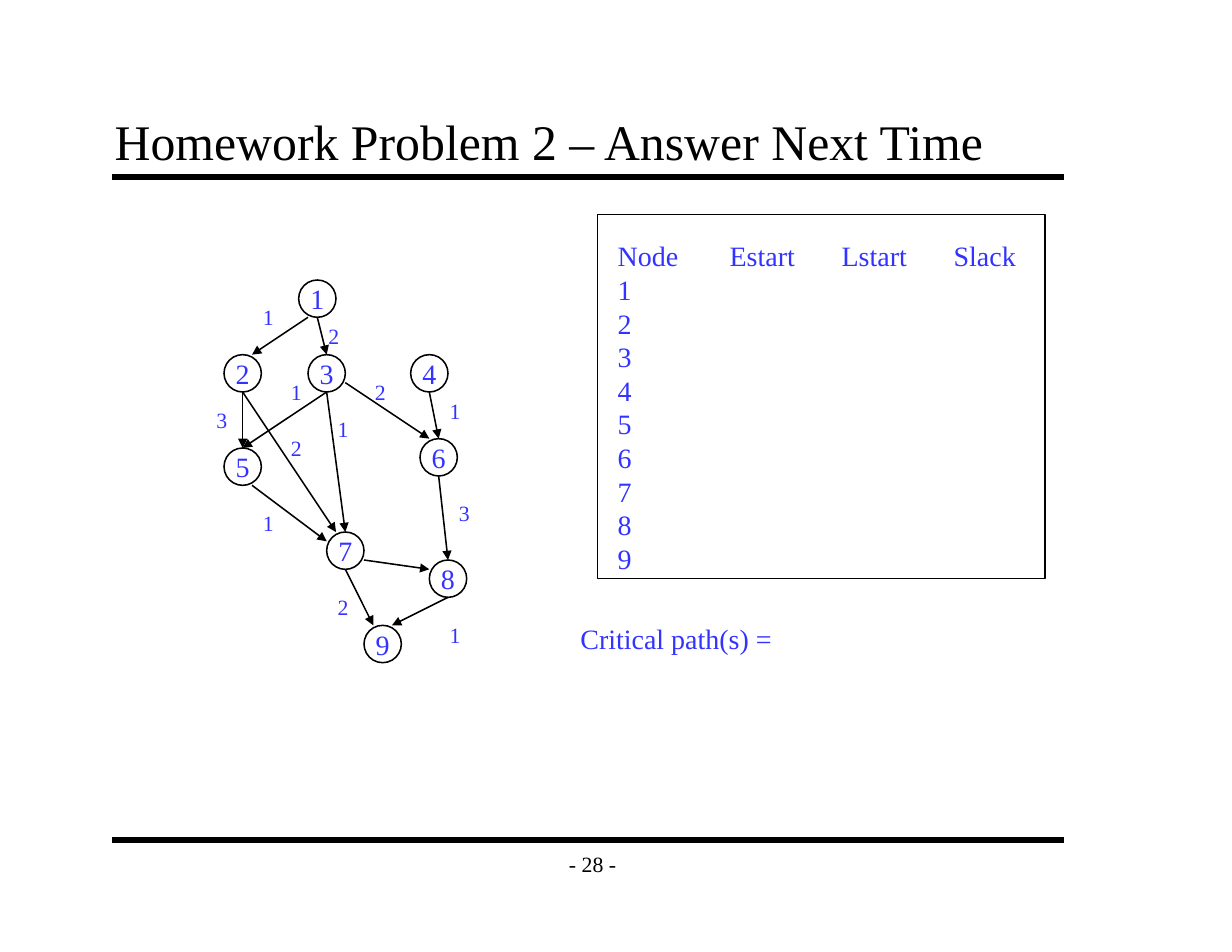
from lxml import etree
from pptx import Presentation
from pptx import util as u
from pptx.dml.color import RGBColor
from pptx.enum import shapes, text
from pptx.oxml.ns import qn

# Content; positions are in grid units of 1/12 inch
TITLE = "Homework Problem 2 – Answer Next Time"
PAGE = "- 28 -"
CRITICAL = "Critical path(s) ="
HEADINGS = ["Node", "Estart", "Lstart", "Slack"]
NODES = {"1": (32, 30), "2": (24, 38), "3": (33, 38), "4": (44, 38), "5": (24, 48),
         "6": (45, 47), "7": (35, 57), "8": (46, 60), "9": (39, 67)}

# Points on a node, as offsets from its top left corner
SIDE = 4
TOP, BOTTOM = (2, 0), (2, 4)
TOP_LEFT, TOP_RIGHT = (1, 0), (3, 0)
LOW_LEFT, LOW_RIGHT = (1, 4), (3, 4)
LEFT, RIGHT = (0, 1), (4, 3)

# From, to, start point, end point, latency, label position
EDGES = [
    ("1", "2", LOW_LEFT, TOP_RIGHT, "1", (27, 32)),
    ("1", "3", BOTTOM, TOP, "2", (34, 34)),
    ("2", "7", BOTTOM, TOP_LEFT, "2", (30, 46)),
    ("3", "5", BOTTOM, TOP, "1", (30, 40)),
    ("3", "7", BOTTOM, TOP, "1", (35, 44)),
    ("2", "5", BOTTOM, TOP, "3", (22, 43)),
    ("5", "7", LOW_RIGHT, LEFT, "1", (27, 54)),
    ("3", "6", RIGHT, TOP_LEFT, "2", (39, 40)),
    ("4", "6", BOTTOM, TOP, "1", (47, 42)),
    ("7", "8", RIGHT, LEFT, None, None),
    ("6", "8", BOTTOM, TOP, "3", (48, 53)),
    ("8", "9", BOTTOM, TOP_RIGHT, "1", (47, 66)),
    ("7", "9", BOTTOM, TOP_LEFT, "2", (35, 63)),
]

THEME = {
    "font": "Times New Roman",
    "ink": RGBColor(0x00, 0x00, 0x00),
    "accent": RGBColor(0x33, 0x33, 0xFF),
    "title": 32, "body": 18, "small": 14,
    "rule": 4, "line": 1,
}


def grid(*units):
    return [u.Cm(n * 2.54 / 12) for n in units]


def write(sp, lines, size, color="accent", align=text.PP_ALIGN.LEFT, **frame):
    tf = sp.text_frame
    for name, value in {"word_wrap": False, **frame}.items():
        setattr(tf, name, value)
    for i, line in enumerate(lines):
        p = tf.paragraphs[0] if i == 0 else tf.add_paragraph()
        p.alignment = align
        r = p.add_run()
        r.text = line
        for name, value in {"name": THEME["font"], "size": u.Pt(THEME[size])}.items():
            setattr(r.font, name, value)
        r.font.color.rgb = THEME[color]


def add_text(s, box, lines, size="body", **fmt):
    write(s.shapes.add_textbox(*grid(*box)), lines, size, **fmt)


def add_outline(s, kind, box):
    sp = s.shapes.add_shape(kind, *grid(*box))
    sp.shadow.inherit = False
    sp.fill.background()
    sp.line.color.rgb = THEME["ink"]
    sp.line.width = u.Pt(THEME["line"])
    return sp


def add_line(s, start, end, weight, arrow=False):
    c = s.shapes.add_connector(shapes.MSO_CONNECTOR.STRAIGHT, *grid(*start, *end))
    c.line.color.rgb = THEME["ink"]
    c.line.width = u.Pt(THEME[weight])
    if arrow:
        etree.SubElement(c.line._get_or_add_ln(), qn("a:tailEnd"), type="triangle")
    etree.SubElement(c._element.spPr, qn("a:effectLst"))


def node_point(node, offset):
    return [a + b for a, b in zip(NODES[node], offset)]


def main():
    prs = Presentation()
    prs.slide_width, prs.slide_height = u.Cm(27.94), u.Cm(21.59)
    s = prs.slides.add_slide(prs.slide_layouts[5])
    insets = {"margin_left": u.Cm(0.27), "margin_right": u.Cm(0.27),
              "margin_top": u.Cm(0.15), "margin_bottom": u.Cm(0.15)}
    middle = text.MSO_ANCHOR.MIDDLE
    center = text.PP_ALIGN.CENTER
    grow = {"auto_size": text.MSO_AUTO_SIZE.SHAPE_TO_FIT_TEXT}

    # Rules, page number and title
    for y in (19, 90):
        add_line(s, (12, y), (114, y), "rule")
    add_text(s, (59, 90, 9, 5), [PAGE], "small", color="ink", align=center,
             vertical_anchor=middle, **insets)
    title = s.shapes.title
    title.left, title.top, title.width, title.height = grid(11, 11, 102, 8)
    write(title, [TITLE], "title", color="ink", word_wrap=True,
          auto_size=text.MSO_AUTO_SIZE.NONE,
          vertical_anchor=text.MSO_ANCHOR.BOTTOM, **insets)

    # Dependence graph
    for name, at in NODES.items():
        sp = add_outline(s, shapes.MSO_SHAPE.OVAL, (*at, SIDE, SIDE))
        write(sp, [name], "body", align=center, vertical_anchor=middle)
    for source, target, start, end, latency, at in EDGES:
        add_line(s, node_point(source, start), node_point(target, end), "line", arrow=True)
        if latency:
            add_text(s, (*at, 3.6, 4), [latency], "small", **grow)

    # Answer sheet
    add_text(s, (65, 25, 45.1, 37.2), ["\t".join(HEADINGS), *NODES], **grow)
    add_outline(s, shapes.MSO_SHAPE.RECTANGLE, (64, 23, 48, 39))
    add_text(s, (61, 66, 23.6, 4.8), [CRITICAL], **grow)

    prs.save("out.pptx")


if __name__ == "__main__":
    main()
